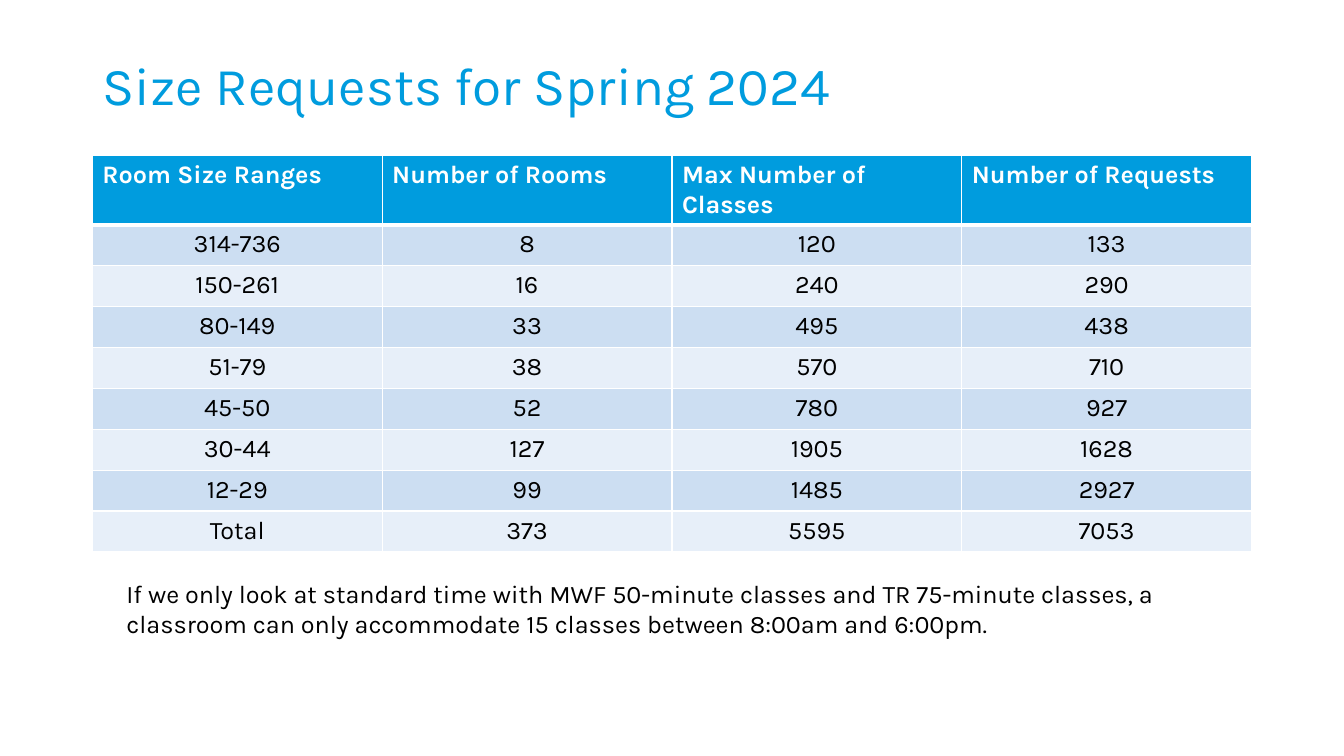
from typing import NamedTuple

from lxml import etree
from pptx import Presentation
from pptx.dml.color import RGBColor
from pptx.enum.text import MSO_ANCHOR, MSO_AUTO_SIZE, PP_ALIGN
from pptx.oxml.ns import qn
from pptx.util import Emu, Pt

LEFT, CENTER = PP_ALIGN.LEFT, PP_ALIGN.CENTER
MIDDLE = MSO_ANCHOR.MIDDLE
NO_FIT, GROW = MSO_AUTO_SIZE.NONE, MSO_AUTO_SIZE.SHAPE_TO_FIT_TEXT
TITLE_ONLY = 5

FONT = "Karla"
COLORS = {
    "blue": "009CDE",
    "band_dark": "CCDEF2",
    "band_light": "E7EFF9",
    "white": "FFFFFF",
    "black": "000000",
}


class Box(NamedTuple):
    left: int
    top: int
    width: int
    height: int


class RoomRange(NamedTuple):
    seats: str
    rooms: int
    max_classes: int
    requests: int


TITLE_BOX = Box(88, 38, 1104, 93)
TABLE_BOX = Box(88, 148, 1104, 351)
NOTE_BOX = Box(111, 546, 1035, 68)

HEADERS = ("Room Size Ranges", "Number of Rooms",
           "Max Number of Classes", "Number of Requests")
ROOM_RANGES = [
    RoomRange("314-736", 8, 120, 133),
    RoomRange("150-261", 16, 240, 290),
    RoomRange("80-149", 33, 495, 438),
    RoomRange("51-79", 38, 570, 710),
    RoomRange("45-50", 52, 780, 927),
    RoomRange("30-44", 127, 1905, 1628),
    RoomRange("12-29", 99, 1485, 2927),
    RoomRange("Total", 373, 5595, 7053),
]
NOTE = ("If we only look at standard time with MWF 50-minute classes and "
        "TR 75-minute classes, a classroom can only accommodate 15 classes "
        "between 8:00am and 6:00pm.")


def px(n: int) -> Emu:
    return Emu(n * 9525)


def place(box: Box) -> list[Emu]:
    return [px(n) for n in box]


def rgb(name: str) -> RGBColor:
    return RGBColor.from_string(COLORS[name])


def write(tf, text: str, size: int, color: str, align=LEFT, bold: bool = False) -> None:
    p = tf.paragraphs[0]
    p.text = text
    p.alignment = align
    p.font.name = FONT
    p.font.size = Pt(size)
    p.font.bold = bold
    p.font.color.rgb = rgb(color)


def add_borders(cell, top: int, bottom: int) -> None:
    """Draw white cell borders; widths are in points."""
    tc_pr = cell._tc.get_or_add_tcPr()
    for side, width in (("L", 1), ("R", 1), ("T", top), ("B", bottom)):
        ln = etree.SubElement(tc_pr, qn(f"a:ln{side}"), w=str(Pt(width)))
        fill = etree.SubElement(ln, qn("a:solidFill"))
        etree.SubElement(fill, qn("a:srgbClr"), val=COLORS["white"])


def add_title(slide) -> None:
    sp = slide.shapes.title
    sp.left, sp.top, sp.width, sp.height = place(TITLE_BOX)
    tf = sp.text_frame
    tf.word_wrap = True
    tf.auto_size = NO_FIT
    tf.vertical_anchor = MIDDLE
    write(tf, "Size Requests for Spring 2024", 38, "blue")
    tf.paragraphs[0].line_spacing = 0.9


def add_room_table(slide) -> None:
    rows = [HEADERS, *ROOM_RANGES]
    table = slide.shapes.add_table(len(rows), len(HEADERS), *place(TABLE_BOX)).table
    for i, row in enumerate(rows):
        header = i == 0
        band = "blue" if header else "band_dark" if i % 2 else "band_light"
        for j, value in enumerate(row):
            cell = table.cell(i, j)
            add_borders(cell, top=3 if i == 1 else 1, bottom=3 if header else 1)
            cell.fill.solid()
            cell.fill.fore_color.rgb = rgb(band)
            write(cell.text_frame, str(value), 18,
                  "white" if header else "black",
                  LEFT if header else CENTER, bold=header)


def add_note(slide) -> None:
    tf = slide.shapes.add_textbox(*place(NOTE_BOX)).text_frame
    tf.word_wrap = True
    tf.auto_size = GROW
    write(tf, NOTE, 18, "black")


def main() -> None:
    prs = Presentation()
    prs.slide_width, prs.slide_height = px(1280), px(720)
    slide = prs.slides.add_slide(prs.slide_layouts[TITLE_ONLY])

    # Title, table of room sizes, closing note
    add_title(slide)
    add_room_table(slide)
    add_note(slide)

    prs.save("out.pptx")


if __name__ == "__main__":
    main()
